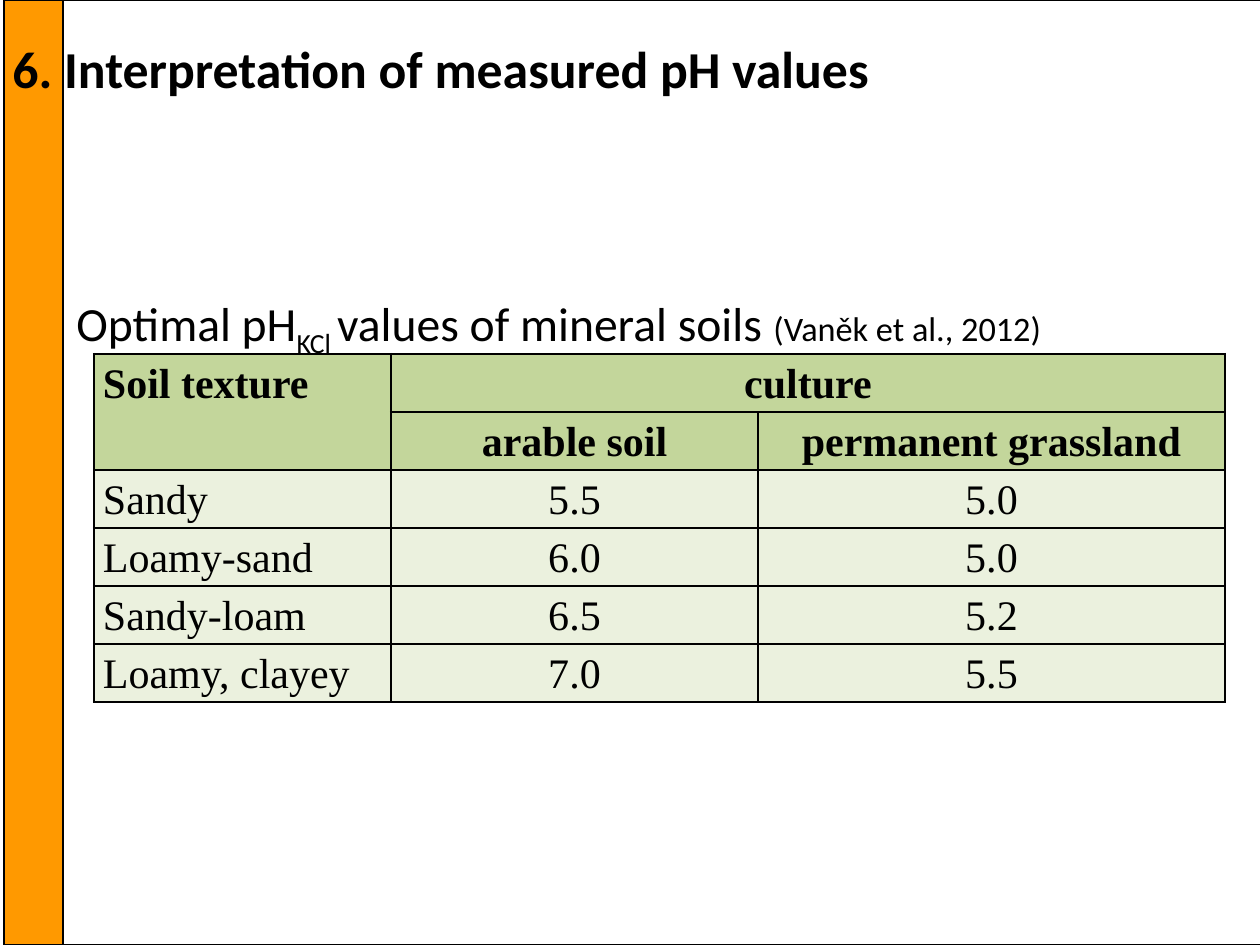
import dataclasses

import lxml.etree
import pptx
import pptx.dml.color
import pptx.enum.shapes
import pptx.enum.text
import pptx.oxml.ns
import pptx.util

PX = 914400 / 126
ALIGN = pptx.enum.text.PP_ALIGN


@dataclasses.dataclass(frozen=True)
class Theme:
    """Colours, fonts and type sizes of the slide."""

    ink: str = "000000"
    paper: str = "FFFFFF"
    accent: str = "FF9900"
    header_fill: str = "C3D69B"
    body_fill: str = "EBF1DE"
    text_font: str = "Calibri"
    table_font: str = "Times New Roman"
    title_size: float = 29.6
    caption_size: float = 27.2
    citation_size: float = 19.6
    table_size: float = 24
    thick: float = 1.5
    thin: float = 1


THEME = Theme()


def px(length):
    """Turn px into EMU."""
    return pptx.util.Emu(round(length * PX))


def rgb(colour):
    """Turn a hex string into a colour."""
    return pptx.dml.color.RGBColor.from_string(colour)


def add_run(paragraph, text, size, font, bold=False, baseline=0):
    """Append one formatted run."""
    run = paragraph.add_run()
    run.text = text
    run.font.size = pptx.util.Pt(size)
    run.font.name = font
    run.font.bold = bold
    run.font.color.rgb = rgb(THEME.ink)
    if baseline:
        run.font._element.set("baseline", str(baseline * 1000))


def add_panel(slide, box, colour):
    """Draw one outlined background rectangle."""
    panel = slide.shapes.add_shape(
        pptx.enum.shapes.MSO_SHAPE.RECTANGLE, *map(px, box))
    panel.shadow.inherit = False
    panel.fill.solid()
    panel.fill.fore_color.rgb = rgb(colour)
    panel.line.color.rgb = rgb(THEME.ink)
    panel.line.width = pptx.util.Pt(0.75)


def add_background(slide, box, band_width):
    """Draw the page frame with its coloured band on the left."""
    left, top, width, height = box
    add_panel(slide, (left, top, width, height), THEME.paper)
    add_panel(slide, (left, top, band_width, height), THEME.accent)


def add_line_of_text(slide, box, runs):
    """Place one paragraph made of several runs."""
    frame = slide.shapes.add_textbox(*map(px, box)).text_frame
    frame.word_wrap = True
    frame.margin_top = px(11)
    frame.margin_bottom = px(0)
    for run in runs:
        add_run(frame.paragraphs[0], **run)


def add_title(slide, box, text):
    """Place the bold slide title."""
    add_line_of_text(slide, box, [
        dict(text=text, size=THEME.title_size, font=THEME.text_font, bold=True)])


def add_caption(slide, box):
    """Place the table caption with its subscript and citation."""
    main = dict(size=THEME.caption_size, font=THEME.text_font)
    add_line_of_text(slide, box, [
        dict(main, text="Optimal pH"),
        dict(main, text="KCl ", baseline=-25),
        dict(main, text="values of mineral soils "),
        dict(main, text="(Vaněk et al., 2012)", size=THEME.citation_size),
    ])


def set_borders(cell, widths):
    """Draw the cell borders from a mapping of side to width in points."""
    properties = cell._tc.get_or_add_tcPr()
    qn = pptx.oxml.ns.qn
    for side, width in widths.items():
        line = lxml.etree.SubElement(
            properties, qn(f"a:ln{side}"), w=str(pptx.util.Pt(width)))
        fill = lxml.etree.SubElement(line, qn("a:solidFill"))
        lxml.etree.SubElement(fill, qn("a:srgbClr"), val=THEME.ink)


def add_ph_table(slide, box, column_widths, rows, header_rows):
    """Build the table of optimal pH values."""
    row_count, column_count = len(rows), len(column_widths)
    table = slide.shapes.add_table(
        row_count, column_count, *map(px, box)).table
    for column, width in zip(table.columns, column_widths):
        column.width = px(width)
    for row in table.rows:
        row.height = px(box[3] / row_count)
    table.cell(0, 0).merge(table.cell(1, 0))
    table.cell(0, 1).merge(table.cell(0, 2))

    def rule(index, heavy):
        return THEME.thick if index in heavy else THEME.thin

    heavy_columns = (0, 1, column_count)
    heavy_rows = (0, header_rows, row_count)
    for r, labels in enumerate(rows):
        is_header = r < header_rows
        for c, label in enumerate(labels):
            cell = table.cell(r, c)
            height = cell.span_height if cell.is_merge_origin else 1
            width = cell.span_width if cell.is_merge_origin else 1
            set_borders(cell, {
                "L": rule(c, heavy_columns),
                "R": rule(c + width, heavy_columns),
                "T": rule(r, heavy_rows),
                "B": rule(r + height, heavy_rows),
            })
            cell.fill.solid()
            cell.fill.fore_color.rgb = rgb(
                THEME.header_fill if is_header else THEME.body_fill)
            cell.margin_left = cell.margin_right = px(9)
            cell.margin_top = cell.margin_bottom = px(0)
            if label:
                paragraph = cell.text_frame.paragraphs[0]
                paragraph.alignment = ALIGN.CENTER if c else ALIGN.JUSTIFY
                paragraph.line_spacing = 1.15
                add_run(paragraph, label, THEME.table_size,
                        THEME.table_font, bold=is_header)


def main():
    """Build and save the slide."""
    deck = pptx.Presentation()
    deck.slide_width, deck.slide_height = px(1260), px(945)
    slide = deck.slides.add_slide(deck.slide_layouts[6])
    add_background(slide, (4, 0, 1260, 945), band_width=59)
    add_title(slide, (0, 26, 927, 80), "6. Interpretation of measured pH values")
    add_ph_table(slide, (94, 354, 1131, 338), (297, 367, 467), [
        ("Soil texture", "culture", ""),
        ("", "arable soil", "permanent grassland"),
        ("Sandy", "5.5", "5.0"),
        ("Loamy-sand", "6.0", "5.0"),
        ("Sandy-loam", "6.5", "5.2"),
        ("Loamy, clayey", "7.0", "5.5"),
    ], header_rows=2)
    add_caption(slide, (64, 283, 1124, 59))
    deck.save("out.pptx")


if __name__ == "__main__":
    main()
